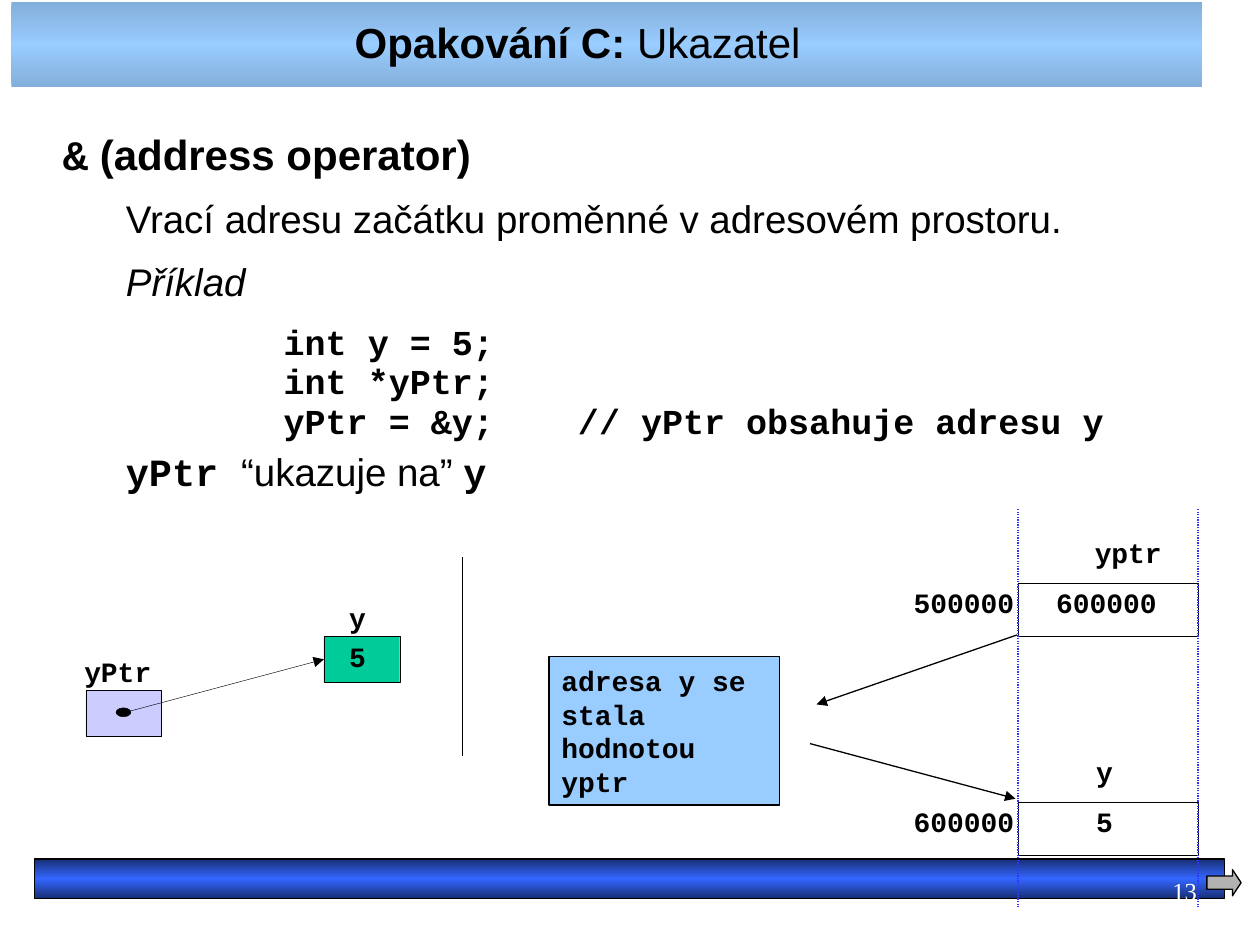
from copy import deepcopy
from dataclasses import dataclass
from typing import Optional

from lxml.etree import SubElement
from pptx import Presentation
from pptx.dml.color import RGBColor
from pptx.enum.dml import MSO_LINE_DASH_STYLE as Dash
from pptx.enum.shapes import MSO_CONNECTOR as Connector, MSO_SHAPE as Preset
from pptx.enum.text import MSO_ANCHOR as Anchor, PP_ALIGN as Align
from pptx.oxml.ns import qn
from pptx.util import Cm, Pt

BLACK = "000000"
MONO = "Courier New"
SANS = "Arial"
CODE = {"name": MONO, "size": Pt(16), "bold": True}
CELL_LEFT, CELL_WIDTH, CELL_HEIGHT = 20.52, 3.63, 1.07


@dataclass
class Box:
    left: float
    top: float
    width: float
    height: float

    def lengths(self) -> list:
        return [Cm(v) for v in (self.left, self.top, self.width, self.height)]


@dataclass
class Line:
    start: tuple
    end: tuple
    color: str = BLACK
    width: float = 0.75
    arrow: bool = False
    dash: Optional[Dash] = None


@dataclass
class BodyParagraph:
    runs: list
    margin: float
    indent: float
    space_after: float


@dataclass
class MemoryCell:
    name: str
    name_left: float
    address: str
    value: str
    value_left: float
    top: float


BODY = [
    BodyParagraph([("&", {"name": MONO, "size": Pt(24), "bold": True}),
                   (" (address operator)", {"name": SANS, "size": Pt(24), "bold": True})],
                  0.97, -0.97, 10.6),
    BodyParagraph([("Vrací adresu začátku proměnné v adresovém prostoru.",
                    {"name": SANS, "size": Pt(22)})], 2.06, -0.79, 11.4),
    BodyParagraph([("Příklad", {"name": SANS, "size": Pt(22), "italic": True})],
                  2.06, -0.79, 11.4),
    BodyParagraph([("int y = 5;\nint *yPtr;\nyPtr = &y;    // yPtr obsahuje adresu y",
                    {"name": MONO, "size": Pt(20), "bold": True})], 4.45, 0, 5.8),
    BodyParagraph([("yPtr ", {"name": MONO, "size": Pt(22), "bold": True}),
                   ("“ukazuje na” ", {"name": SANS, "size": Pt(22)}),
                   ("y", {"name": MONO, "size": Pt(22), "bold": True})],
                  2.06, -0.79, 11.4),
]
MEMORY = [
    MemoryCell("yptr", 22.07, "500000", "600000", 21.29, 11.76),
    MemoryCell("y", 22.1, "600000", "5", 22.1, 16.18),
]
LINES = [
    Line((9.32, 11.23), (9.32, 15.24)),
    Line((16.33, 14.99), (20.47, 16.1), arrow=True),
    Line((20.5, 12.8), (16.46, 14.2), arrow=True),
] + [Line((x, 10.26), (x, 18.29), "3333FF", dash=Dash.ROUND_DOT)
     for x in (CELL_LEFT, CELL_LEFT + CELL_WIDTH)]


def rgb(color: str) -> RGBColor:
    return RGBColor.from_string(color)


def set_values(target, values: dict) -> None:
    for name, value in values.items():
        setattr(target, name, value)


def add_text(paragraph, text: str, values: dict, color: str = BLACK) -> None:
    for index, part in enumerate(text.split("\n")):
        if index:
            paragraph.add_line_break()
        run = paragraph.add_run()
        run.text = part
        set_values(run.font, values)
        run.font.color.rgb = rgb(color)


def add_textbox(shapes, box: Box, wrap: bool = True):
    frame = shapes.add_textbox(*box.lengths()).text_frame
    set_values(frame, {"margin_left": 0, "margin_top": 0, "margin_right": 0,
                       "margin_bottom": 0, "word_wrap": wrap})
    return frame


def add_label(shapes, text: str, left: float, top: float, height: float, spacing: float) -> None:
    frame = add_textbox(shapes, Box(left, top, 0.35 * len(text) + 0.1, height), False)
    frame.paragraphs[0].line_spacing = spacing
    add_text(frame.paragraphs[0], text, CODE)


def fill_gradient(shape, edge: str, middle: str) -> None:
    shape.fill.gradient()
    shape.fill.gradient_angle = 90
    stop_list = next(shape._element.iter(qn("a:gsLst")))
    stop_list.append(deepcopy(stop_list[0]))
    for stop, color, position in zip(shape.fill.gradient_stops,
                                     (edge, middle, edge), (0, 0.5, 1)):
        stop.color.rgb = rgb(color)
        stop.position = position


def add_box(shapes, preset: Preset, box: Box, fill: Optional[str] = None, width: float = 0.25):
    shape = shapes.add_shape(preset, *box.lengths())
    shape.shadow.inherit = False
    if fill:
        shape.fill.solid()
        shape.fill.fore_color.rgb = rgb(fill)
    else:
        shape.fill.background()
    shape.line.color.rgb = rgb(BLACK)
    shape.line.width = Pt(width)
    return shape


def add_line(shapes, line: Line):
    connector = shapes.add_connector(
        Connector.STRAIGHT, *[Cm(v) for v in line.start + line.end])
    connector.line.color.rgb = rgb(line.color)
    set_values(connector.line, {"width": Pt(line.width), "dash_style": line.dash})
    if line.arrow:
        SubElement(connector.line._get_or_add_ln(), qn("a:tailEnd"), type="triangle")
    SubElement(connector._element.spPr, qn("a:effectLst"))
    return connector


def format_title(title) -> None:
    set_values(title, dict(zip(("left", "top", "width", "height"),
                               Box(0.23, 0.05, 24, 1.7).lengths())))
    fill_gradient(title, "83AFDB", "99CCFF")
    title.text_frame.vertical_anchor = Anchor.MIDDLE
    paragraph = title.text_frame.paragraphs[0]
    set_values(paragraph, {"alignment": Align.CENTER, "line_spacing": 0.93})
    for text, bold in (("Opakování C: ", True), ("Ukazatel\t", False)):
        add_text(paragraph, text, {"name": SANS, "size": Pt(24), "bold": bold})


def add_body(shapes) -> None:
    frame = add_textbox(shapes, Box(1.27, 2.64, 22.86, 8.76))
    frame.margin_top = Cm(0.05)
    for index, item in enumerate(BODY):
        paragraph = frame.add_paragraph() if index else frame.paragraphs[0]
        set_values(paragraph, {"line_spacing": 0.93, "space_after": Pt(item.space_after)})
        properties = paragraph._p.get_or_add_pPr()
        properties.set("marL", str(Cm(item.margin)))
        properties.set("indent", str(Cm(item.indent)))
        for text, values in item.runs:
            add_text(paragraph, text, values)


def add_pointer(shapes) -> None:
    add_box(shapes, Preset.RECTANGLE, Box(1.73, 13.92, 1.53, 0.92), "CCCCFF")
    target = add_box(shapes, Preset.RECTANGLE, Box(6.53, 12.83, 1.53, 0.92), "00CC99")
    arrow = add_line(shapes, Line((2.49, 14.37), (6.53, 13.29), width=0.25, arrow=True))
    arrow.end_connect(target, 1)
    add_box(shapes, Preset.OVAL, Box(2.34, 14.27, 0.3, 0.18), BLACK)
    for text, left, top in (("yPtr", 1.7, 13.36), ("y", 7.04, 12.29), ("5", 7.04, 13.06)):
        add_label(shapes, text, left, top, 0.53, 0.72)


def add_memory_cell(shapes, cell: MemoryCell) -> None:
    add_box(shapes, Preset.RECTANGLE, Box(CELL_LEFT, cell.top, CELL_WIDTH, CELL_HEIGHT))
    for text, left, offset in ((cell.name, cell.name_left, -0.84),
                               (cell.address, 18.42, 0.18),
                               (cell.value, cell.value_left, 0.18)):
        add_label(shapes, text, left, cell.top + offset, 0.81, 0.8)


def main() -> None:
    presentation = Presentation()
    set_values(presentation, {"slide_width": Cm(25.4), "slide_height": Cm(19.05)})
    slide = presentation.slides.add_slide(presentation.slide_layouts[5])
    shapes = slide.shapes
    format_title(shapes.title)
    footer = add_box(shapes, Preset.RECTANGLE, Box(0.69, 17.32, 24, 0.79), width=0.75)
    fill_gradient(footer, "182F76", "3366FF")
    number = add_textbox(shapes, Box(18.21, 17.35, 5.92, 1.27))
    number.vertical_anchor = Anchor.MIDDLE
    set_values(number.paragraphs[0], {"alignment": Align.RIGHT, "line_spacing": 0.95})
    add_text(number.paragraphs[0], "13", {"name": "Times New Roman", "size": Pt(14)}, "FFFFFF")
    add_body(shapes)
    add_pointer(shapes)
    for cell in MEMORY:
        add_memory_cell(shapes, cell)
    callout = add_box(shapes, Preset.RECTANGLE, Box(11.07, 13.23, 4.65, 3), "99CCFF", 0.75)
    callout.text_frame.word_wrap = True
    callout.text_frame.paragraphs[0].alignment = Align.LEFT
    add_text(callout.text_frame.paragraphs[0], "adresa y se stala hodnotou yptr", CODE)
    for line in LINES:
        add_line(shapes, line)
    arrow = add_box(shapes, Preset.RIGHT_ARROW, Box(24.33, 17.53, 0.69, 0.53), "B2B2B2", 0.75)
    arrow.adjustments[1] = 0.33
    presentation.save("out.pptx")


if __name__ == "__main__":
    main()
